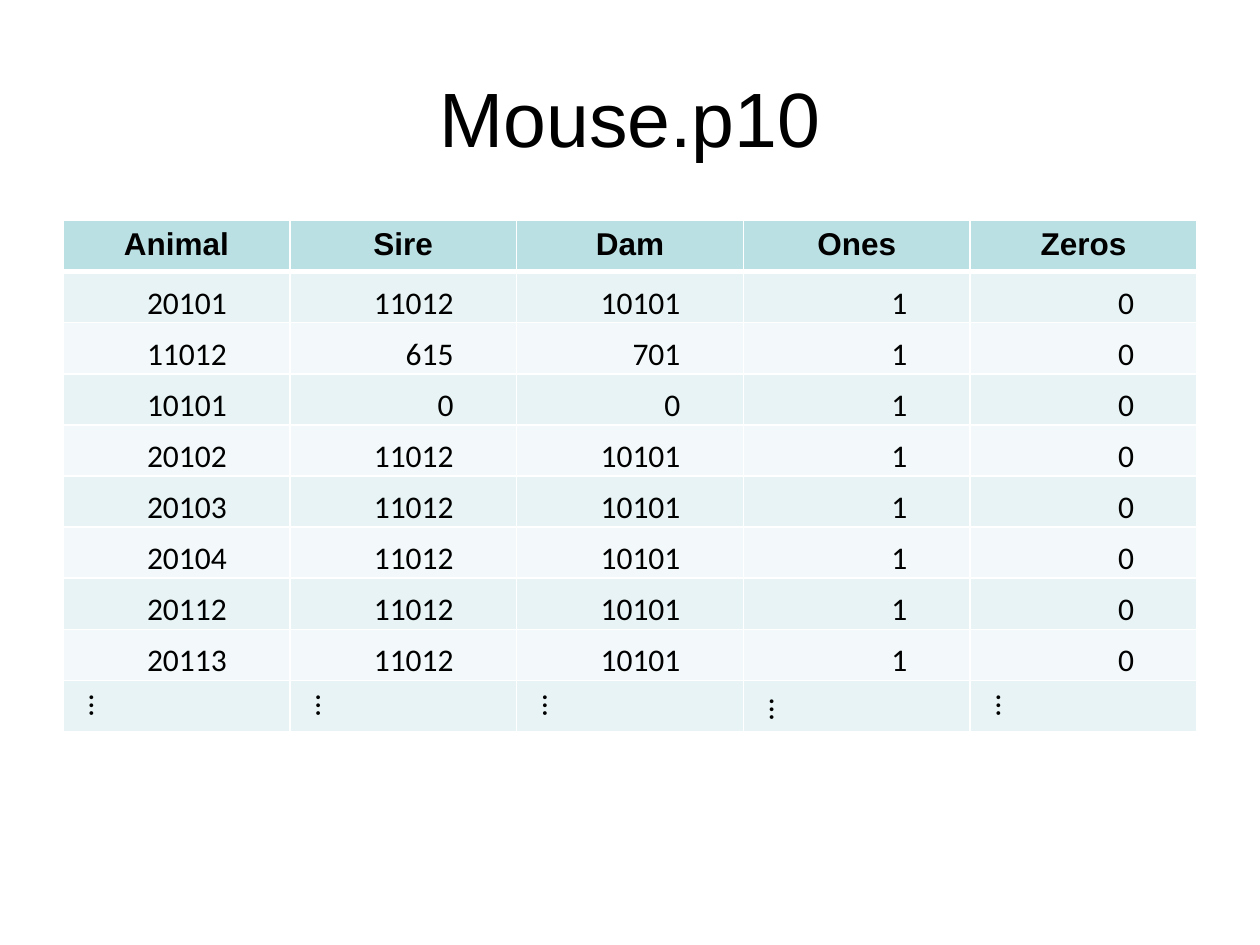
from lxml.etree import SubElement
from pptx import Presentation
from pptx.dml.color import RGBColor
from pptx.enum.text import MSO_ANCHOR, PP_ALIGN
from pptx.oxml.ns import qn
from pptx.util import Pt

HEADS = ["Animal", "Sire", "Dam", "Ones", "Zeros"]
PEDIGREE = [
    ("20101", "11012", "10101"),
    ("11012", "615", "701"),
    ("10101", "0", "0"),
    ("20102", "11012", "10101"),
    ("20103", "11012", "10101"),
    ("20104", "11012", "10101"),
    ("20112", "11012", "10101"),
    ("20113", "11012", "10101"),
]
DOTS = ["…", "…", "…", "… ", "…"]
HEAD_FILL = "BBE0E3"
BANDS = ["F3F9FA", "E7F3F4"]


def color(code):
    return RGBColor.from_string(code)


def write(frame, text, font, size, align, bold=False):
    para = frame.paragraphs[0]
    para.text = text
    para.alignment = align
    para.font.name = font
    para.font.size = Pt(size)
    para.font.bold = bold
    para.font.color.rgb = color("000000")


def border(cell, top=1, bottom=1):
    """Draw white cell edges, with the given top and bottom widths."""
    props = cell._tc.get_or_add_tcPr()
    for side, width in (("L", 1), ("R", 1), ("T", top), ("B", bottom)):
        line = SubElement(props, qn(f"a:ln{side}"), w=str(Pt(width)))
        fill = SubElement(line, qn("a:solidFill"))
        SubElement(fill, qn("a:srgbClr"), val="FFFFFF")


def paint(cell, code):
    cell.fill.solid()
    cell.fill.fore_color.rgb = color(code)


def inset(cell, anchor):
    cell.margin_left = cell.margin_right = Pt(36)
    cell.margin_top = cell.margin_bottom = Pt(0)
    cell.vertical_anchor = anchor


def add_title(slide, left, top, width, height):
    frame = slide.shapes.add_textbox(
        Pt(left), Pt(top), Pt(width), Pt(height)).text_frame
    frame.word_wrap = True
    frame.vertical_anchor = MSO_ANCHOR.MIDDLE
    write(frame, "Mouse.p10", "Arial", 44, PP_ALIGN.CENTER)


def add_grid(slide, left, top, width, height):
    rows = [HEADS] + [(*ids, "1", "0") for ids in PEDIGREE] + [DOTS]
    last = len(rows) - 1
    table = slide.shapes.add_table(
        len(rows), len(HEADS), Pt(left), Pt(top), Pt(width), Pt(height)).table
    table.horz_banding = False
    table.first_row = False
    for i, row in enumerate(rows):
        for j, text in enumerate(row):
            cell = table.cell(i, j)
            border(cell, top=3 if i == 1 else 1, bottom=3 if i == 0 else 1)
            paint(cell, BANDS[i % 2] if i else HEAD_FILL)
            if i == 0:
                write(cell.text_frame, text, "Arial", 18, PP_ALIGN.CENTER, True)
            elif i < last:
                inset(cell, MSO_ANCHOR.BOTTOM)
                write(cell.text_frame, text, "Calibri", 18, PP_ALIGN.RIGHT)
            else:
                inset(cell, MSO_ANCHOR.MIDDLE if j < 3 else MSO_ANCHOR.BOTTOM)
                cell._tc.get_or_add_tcPr().set("vert", "vert270")
                write(cell.text_frame, text, "Calibri", 18, PP_ALIGN.CENTER)


def main():
    deck = Presentation()
    deck.slide_width, deck.slide_height = Pt(720), Pt(540)
    slide = deck.slides.add_slide(deck.slide_layouts[6])
    add_title(slide, 36, 21.6, 648, 90)
    add_grid(slide, 36, 126, 648, 292)
    deck.save("out.pptx")


if __name__ == "__main__":
    main()
